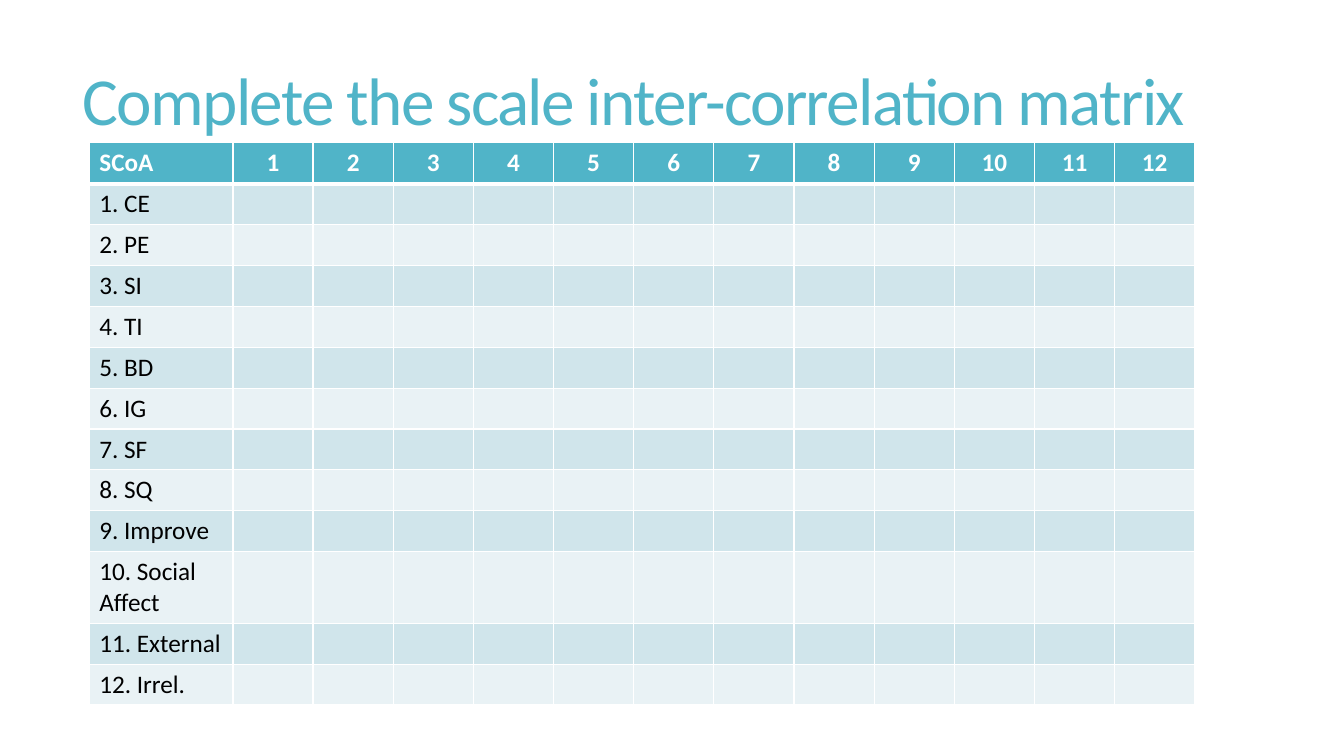
from dataclasses import dataclass

from lxml.etree import SubElement
from pptx import Presentation
from pptx.dml.color import RGBColor
from pptx.enum.text import MSO_ANCHOR, MSO_AUTO_SIZE, PP_ALIGN
from pptx.oxml.ns import qn
from pptx.slide import Slide
from pptx.table import _Cell
from pptx.text.text import TextFrame
from pptx.util import Cm, Pt

TEAL = RGBColor(0x50, 0xB4, 0xC8)
BAND_DARK = RGBColor(0xD0, 0xE5, 0xEB)
BAND_LIGHT = RGBColor(0xE9, 0xF2, 0xF5)
WHITE = RGBColor(0xFF, 0xFF, 0xFF)
BLACK = RGBColor(0x00, 0x00, 0x00)

SCALES = ["CE", "PE", "SI", "TI", "BD", "IG", "SF", "SQ",
          "Improve", "Social Affect", "External", "Irrel."]
LABEL_WIDTH, SCORE_WIDTH, ROW_HEIGHT = 3.62, 2.02, 1.03


@dataclass(frozen=True)
class RowStyle:
    fill: RGBColor
    color: RGBColor = BLACK
    bold: bool = False
    top: float = 1
    bottom: float = 1


HEADER = RowStyle(TEAL, WHITE, bold=True, bottom=3)


def write_text(tf: TextFrame, text: str, *, size: float, color: RGBColor,
               bold: bool = False, align: PP_ALIGN = PP_ALIGN.LEFT,
               line_spacing: float = 1.0, tracking: float = 0) -> None:
    p = tf.paragraphs[0]
    p.alignment = align
    p.line_spacing = line_spacing
    r = p.add_run()
    r.text = text
    r.font.name = "Calibri"
    r.font.size = Pt(size)
    r.font.bold = bold
    r.font.color.rgb = color
    if tracking:
        r.font._element.set("spc", str(round(tracking * 100)))


def add_border(cell: _Cell, side: str, width: float) -> None:
    ln = SubElement(cell._tc.get_or_add_tcPr(), qn(f"a:ln{side}"), w=str(Pt(width)))
    fill = SubElement(ln, qn("a:solidFill"))
    SubElement(fill, qn("a:srgbClr"), val=str(WHITE))


def draw_cell(cell: _Cell, text: str, style: RowStyle, align: PP_ALIGN) -> None:
    for side, width in (("L", 1), ("R", 1), ("T", style.top), ("B", style.bottom)):
        add_border(cell, side, width)
    cell.fill.solid()
    cell.fill.fore_color.rgb = style.fill
    if text:
        write_text(cell.text_frame, text, size=18, color=style.color,
                   bold=style.bold, align=align)


def draw_title(s: Slide, text: str) -> None:
    sp = s.shapes.title
    sp.left, sp.top, sp.width, sp.height = Cm(1.83), Cm(1.4), Cm(29.92), Cm(2.51)
    tf = sp.text_frame
    tf.word_wrap = True
    tf.auto_size = MSO_AUTO_SIZE.NONE
    tf.vertical_anchor = MSO_ANCHOR.MIDDLE
    write_text(tf, text, size=48, color=TEAL, line_spacing=0.85, tracking=-1.2)


def draw_matrix(s: Slide, scales: list[str]) -> None:
    n = len(scales)
    rows = [["SCoA", *(str(i) for i in range(1, n + 1))]]
    rows += [[f"{i}. {name}", *[""] * n] for i, name in enumerate(scales, 1)]
    table = s.shapes.add_table(
        n + 1, n + 1, Cm(2.25), Cm(3.6),
        Cm(LABEL_WIDTH + n * SCORE_WIDTH), Cm((n + 1) * ROW_HEIGHT)).table
    for j, column in enumerate(table.columns):
        column.width = Cm(SCORE_WIDTH if j else LABEL_WIDTH)
    for i, texts in enumerate(rows):
        table.rows[i].height = Cm(ROW_HEIGHT)
        band = BAND_DARK if i % 2 else BAND_LIGHT
        style = RowStyle(band, top=3 if i == 1 else 1) if i else HEADER
        for j, text in enumerate(texts):
            align = PP_ALIGN.CENTER if j else PP_ALIGN.LEFT
            draw_cell(table.cell(i, j), text, style, align)


def main() -> None:
    prs = Presentation()
    prs.slide_width, prs.slide_height = Cm(33.87), Cm(19.05)
    s = prs.slides.add_slide(prs.slide_layouts[5])
    draw_title(s, "Complete the scale inter-correlation matrix")
    draw_matrix(s, SCALES)
    prs.save("out.pptx")


if __name__ == "__main__":
    main()
